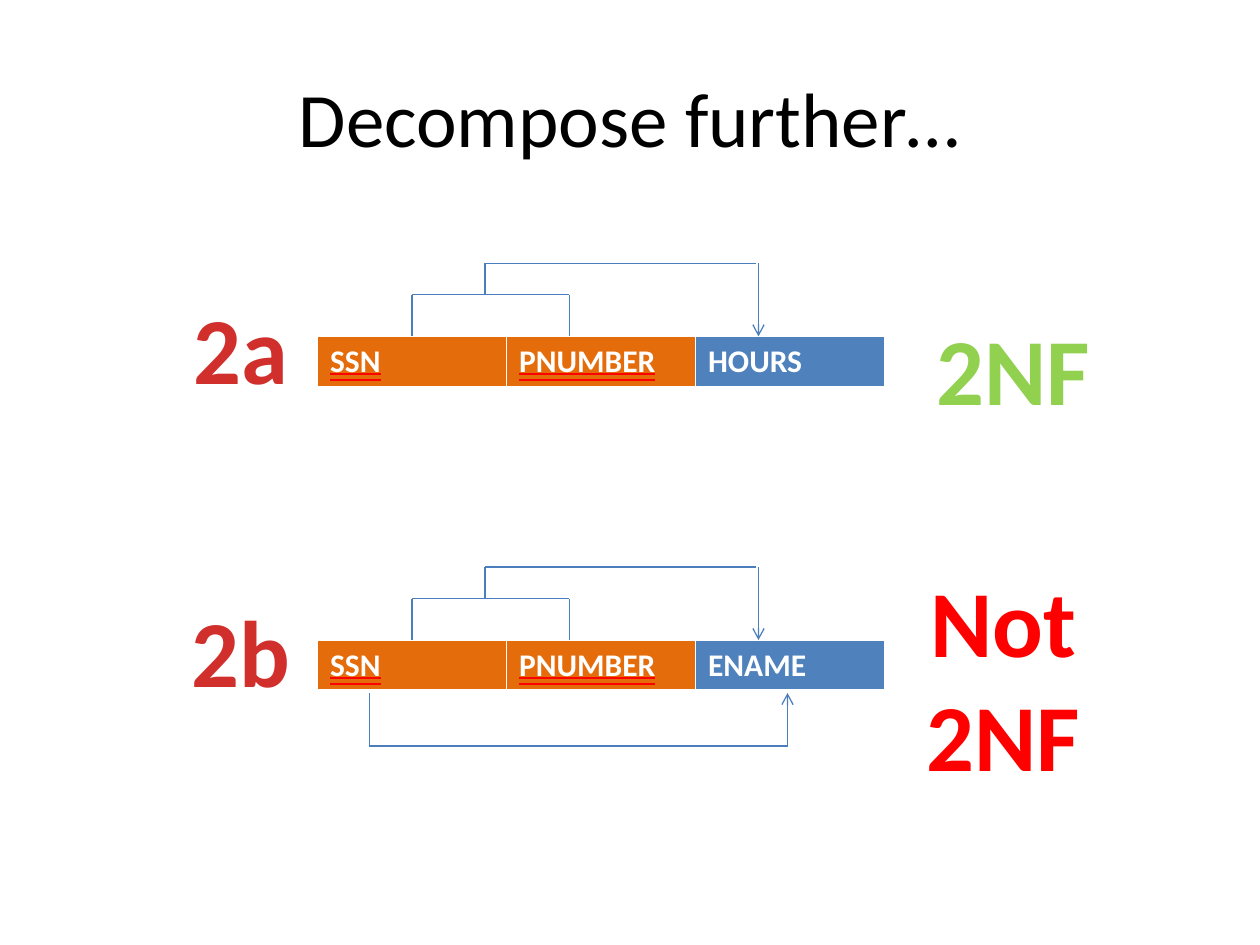
from lxml import etree
from pptx import Presentation
from pptx.dml.color import RGBColor
from pptx.enum.shapes import MSO_CONNECTOR
from pptx.enum.text import MSO_ANCHOR, MSO_AUTO_SIZE, MSO_UNDERLINE, PP_ALIGN
from pptx.oxml import parse_xml
from pptx.oxml.ns import nsdecls, qn
from pptx.util import Inches, Pt

STRAIGHT = MSO_CONNECTOR.STRAIGHT
CENTER = PP_ALIGN.CENTER
MIDDLE = MSO_ANCHOR.MIDDLE
FIT_SHAPE = MSO_AUTO_SIZE.SHAPE_TO_FIT_TEXT
DOUBLE_UNDERLINE = MSO_UNDERLINE.DOUBLE_LINE

FONT = "Calibri"
BLACK = RGBColor(0x00, 0x00, 0x00)
WHITE = RGBColor(0xFF, 0xFF, 0xFF)
KEY_ORANGE = RGBColor(0xE4, 0x6C, 0x0A)
FIELD_BLUE = RGBColor(0x4F, 0x81, 0xBD)
ARROW_BLUE = RGBColor(0x4B, 0x7E, 0xBC)
LABEL_RED = RGBColor(0xD0, 0x2F, 0x2C)
PASS_GREEN = RGBColor(0x92, 0xD0, 0x50)
FAIL_RED = RGBColor(0xFF, 0x00, 0x00)

COLUMN_WIDTH = 1.5
ROW_HEIGHT = 0.41
BORDERS = {"lnL": 1, "lnR": 1, "lnT": 1, "lnB": 3}

# Dependency lines, measured from the top left corner of the table
KEY_TO_FIELD = [
    [(0.75, 0), (0.75, -0.33), (2, -0.33), (2, 0)],
    [(1.33, -0.33), (1.33, -0.58), (3.48, -0.58)],
    [(3.5, -0.58), (3.5, 0)],
]
SSN_TO_FIELD = [(0.41, 0.42), (0.41, 0.84), (3.73, 0.84), (3.73, 0.42)]


def add_run(paragraph, text, size, color, bold=True):
    run = paragraph.add_run()
    run.text = text
    run.font.name = FONT
    run.font.size = Pt(size)
    run.font.bold = bold
    run.font.color.rgb = color
    return run


def add_title(slide, text, left, top, width, height):
    title = slide.shapes.title
    title.left, title.top = Inches(left), Inches(top)
    title.width, title.height = Inches(width), Inches(height)
    title.text_frame.vertical_anchor = MIDDLE
    paragraph = title.text_frame.paragraphs[0]
    paragraph.alignment = CENTER
    add_run(paragraph, text, 44, BLACK, bold=False)


def add_big_label(slide, lines, color, left, top, width, height):
    box = slide.shapes.add_textbox(Inches(left), Inches(top), Inches(width), Inches(height))
    frame = box.text_frame
    frame.word_wrap = len(lines) > 1
    frame.auto_size = FIT_SHAPE
    paragraph = frame.paragraphs[0]
    paragraph.alignment = CENTER
    for index, line in enumerate(lines):
        if index:
            paragraph.add_line_break()
        add_run(paragraph, line, 54, color)


def underline_key(run):
    """Mark a key attribute with a red double underline."""
    run.font.underline = DOUBLE_UNDERLINE
    underline_fill = parse_xml(
        f'<a:uFill {nsdecls("a")}><a:solidFill><a:srgbClr val="{FAIL_RED}"/>'
        "</a:solidFill></a:uFill>"
    )
    run.font._element.find(qn("a:solidFill")).addnext(underline_fill)


def set_borders(cell):
    properties = cell._tc.get_or_add_tcPr()
    for index, (side, points) in enumerate(BORDERS.items()):
        border = parse_xml(
            f'<a:{side} {nsdecls("a")} w="{Pt(points)}"><a:solidFill>'
            f'<a:srgbClr val="{WHITE}"/></a:solidFill></a:{side}>'
        )
        properties.insert(index, border)


def add_attribute_table(slide, keys, field, left, top):
    names = keys + [field]
    table = slide.shapes.add_table(
        1, len(names), Inches(left), Inches(top),
        Inches(COLUMN_WIDTH * len(names)), Inches(ROW_HEIGHT),
    ).table
    for cell, name in zip(table.rows[0].cells, names):
        is_key = name in keys
        cell.fill.solid()
        cell.fill.fore_color.rgb = KEY_ORANGE if is_key else FIELD_BLUE
        set_borders(cell)
        run = add_run(cell.text_frame.paragraphs[0], name, 18, WHITE)
        if is_key:
            underline_key(run)


def add_line(slide, start, end, arrow=False):
    x1, y1, x2, y2 = (Inches(value) for value in start + end)
    connector = slide.shapes.add_connector(STRAIGHT, x1, y1, x2, y2)
    connector.line.color.rgb = ARROW_BLUE
    connector.line.width = Pt(0.75)
    if arrow:
        etree.SubElement(connector.line._get_or_add_ln(), qn("a:tailEnd"), type="arrow")
    etree.SubElement(connector._element.spPr, qn("a:effectLst"))


def add_route(slide, points, left, top, arrow=False):
    """Join the points, given relative to left and top, with straight lines."""
    points = [(left + x, top + y) for x, y in points]
    last = len(points) - 2
    for index, (start, end) in enumerate(zip(points, points[1:])):
        add_line(slide, start, end, arrow and index == last)


def add_relation(slide, label, field, left, top, partial_dependency=False):
    add_attribute_table(slide, ["SSN", "PNUMBER"], field, left, top)
    if partial_dependency:
        add_route(slide, SSN_TO_FIELD, left, top, arrow=True)
    key_bracket, field_branch, field_arrow = KEY_TO_FIELD
    add_route(slide, key_bracket, left, top)
    add_route(slide, field_branch, left, top)
    add_route(slide, field_arrow, left, top, arrow=True)
    add_big_label(slide, [label], LABEL_RED, left - 1.1, top - 0.42, 0.98, 1.01)


def main():
    presentation = Presentation()
    presentation.slide_width, presentation.slide_height = Inches(10), Inches(7.5)
    slide = presentation.slides.add_slide(presentation.slide_layouts.get_by_name("Title Only"))
    add_title(slide, "Decompose further…", 0.5, 0.3, 9, 1.25)
    add_relation(slide, "2a", "HOURS", 2.52, 2.67)
    add_relation(slide, "2b", "ENAME", 2.52, 5.08, partial_dependency=True)
    add_big_label(slide, ["2NF"], PASS_GREEN, 7.33, 2.42, 1.43, 1.01)
    add_big_label(slide, ["Not", "2NF"], FAIL_RED, 7.25, 4.42, 1.43, 1.92)
    presentation.save("out.pptx")


if __name__ == "__main__":
    main()
